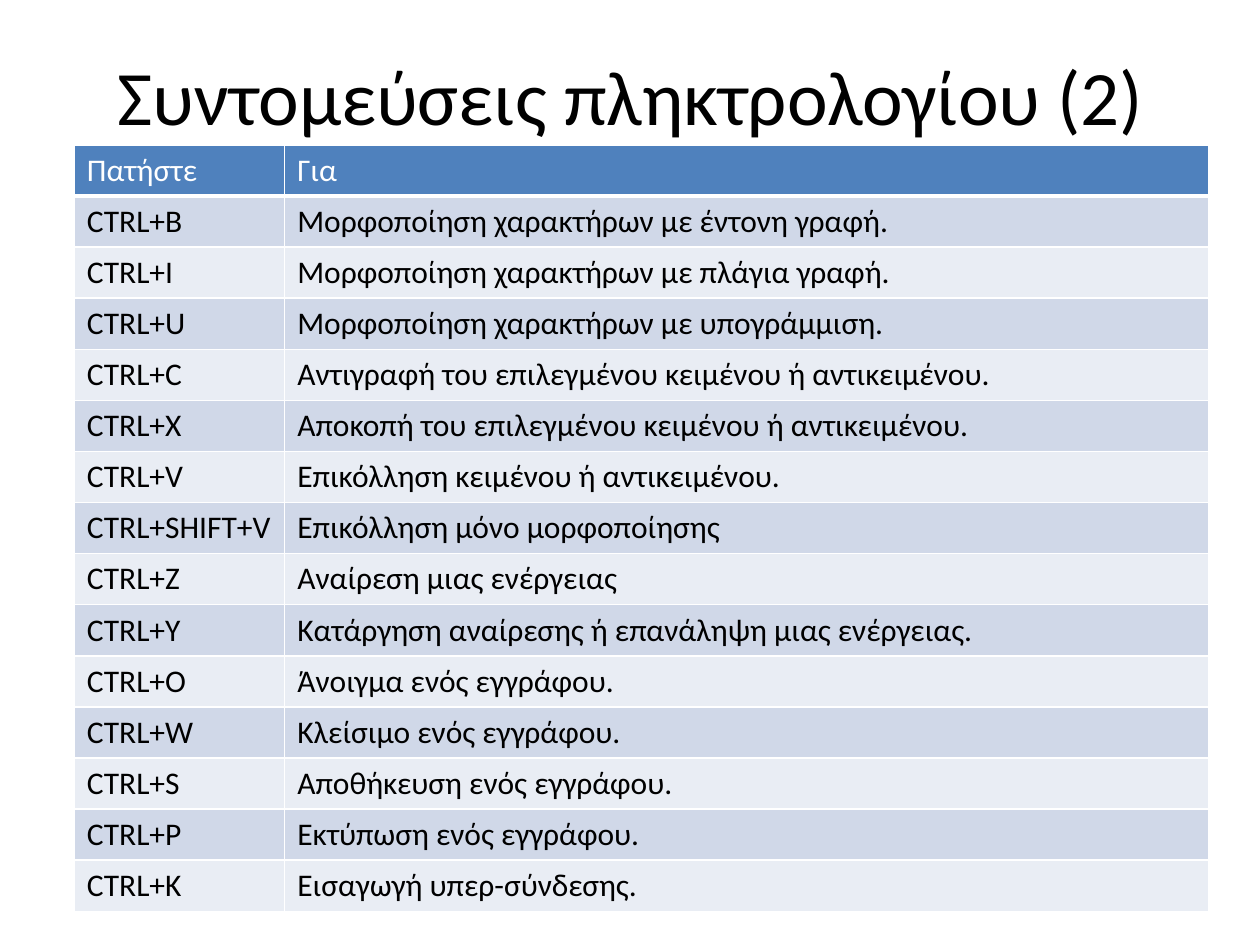
from lxml import etree
from pptx import Presentation
from pptx.dml.color import RGBColor
from pptx.enum.text import MSO_ANCHOR, PP_ALIGN
from pptx.oxml.ns import qn
from pptx.util import Pt

CENTER, LEFT = PP_ALIGN.CENTER, PP_ALIGN.LEFT
MIDDLE = MSO_ANCHOR.MIDDLE

TITLE = "Συντομεύσεις πληκτρολογίου (2)"
HEADER = ("Πατήστε", "Για")
SHORTCUTS = [
    ("CTRL+B", "Μορφοποίηση χαρακτήρων με έντονη γραφή."),
    ("CTRL+I", "Μορφοποίηση χαρακτήρων με πλάγια γραφή."),
    ("CTRL+U", "Μορφοποίηση χαρακτήρων με υπογράμμιση."),
    ("CTRL+C", "Αντιγραφή του επιλεγμένου κειμένου ή αντικειμένου."),
    ("CTRL+X", "Αποκοπή του επιλεγμένου κειμένου ή αντικειμένου."),
    ("CTRL+V", "Επικόλληση κειμένου ή αντικειμένου."),
    ("CTRL+SHIFT+V", "Επικόλληση μόνο μορφοποίησης"),
    ("CTRL+Z", "Αναίρεση μιας ενέργειας"),
    ("CTRL+Y", "Κατάργηση αναίρεσης ή επανάληψη μιας ενέργειας."),
    ("CTRL+O", "Άνοιγμα ενός εγγράφου."),
    ("CTRL+W", "Κλείσιμο ενός εγγράφου."),
    ("CTRL+S", "Αποθήκευση ενός εγγράφου."),
    ("CTRL+P", "Εκτύπωση ενός εγγράφου."),
    ("CTRL+K", "Εισαγωγή υπερ-σύνδεσης."),
]

THEME = {
    "font": "Calibri",
    "title_size": 44,
    "table_size": 18,
    "text": "000000",
    "header_text": "FFFFFF",
    "header_fill": "4F81BD",
    "bands": ("D0D8E8", "E9EDF4"),
    "border": "FFFFFF",
}

SLIDE_SIZE = (720, 540)
TITLE_BOX = (36.72, 9.36, 648, 90)
TABLE_LEFT, TABLE_TOP = 42.48, 82.8
COLUMN_WIDTHS = (120.24, 527.76)
ROW_HEIGHT = 29.18
BORDER_WIDTH, HEADER_RULE_WIDTH = 1, 3


def write(tf, text, size, color, align):
    p = tf.paragraphs[0]
    p.alignment = align
    r = p.add_run()
    r.text = text
    font_values = {"name": THEME["font"], "size": Pt(size), "bold": False}
    for name, value in font_values.items():
        setattr(r.font, name, value)
    r.font.color.rgb = RGBColor.from_string(color)


def set_borders(cell, widths):
    """Draw the cell's edges; widths maps a:lnL, a:lnR, a:lnT and a:lnB to points."""
    props = cell._tc.get_or_add_tcPr()
    for position, (tag, width) in enumerate(widths.items()):
        line = etree.Element(qn(tag), w=str(Pt(width)))
        fill = etree.SubElement(line, qn("a:solidFill"))
        etree.SubElement(fill, qn("a:srgbClr"), val=THEME["border"])
        props.insert(position, line)


def add_shortcut_table(slide):
    rows = [HEADER, *SHORTCUTS]
    table = slide.shapes.add_table(
        len(rows), len(HEADER), Pt(TABLE_LEFT), Pt(TABLE_TOP),
        Pt(sum(COLUMN_WIDTHS)), Pt(ROW_HEIGHT * len(rows))).table
    for column, width in zip(table.columns, COLUMN_WIDTHS):
        column.width = Pt(width)
    for i, values in enumerate(rows):
        table.rows[i].height = Pt(ROW_HEIGHT)
        is_header = i == 0
        fill = THEME["header_fill"] if is_header else THEME["bands"][(i - 1) % 2]
        color = THEME["header_text" if is_header else "text"]
        widths = dict.fromkeys(("a:lnL", "a:lnR", "a:lnT", "a:lnB"), BORDER_WIDTH)
        if is_header:
            widths["a:lnB"] = HEADER_RULE_WIDTH
        elif i == 1:
            widths["a:lnT"] = HEADER_RULE_WIDTH
        for cell, text in zip(table.rows[i].cells, values):
            cell.fill.solid()
            cell.fill.fore_color.rgb = RGBColor.from_string(fill)
            set_borders(cell, widths)
            write(cell.text_frame, text, THEME["table_size"], color, LEFT)


def add_title(slide):
    tf = slide.shapes.add_textbox(*map(Pt, TITLE_BOX)).text_frame
    tf.word_wrap = True
    tf.vertical_anchor = MIDDLE
    write(tf, TITLE, THEME["title_size"], THEME["text"], CENTER)


def main():
    prs = Presentation()
    prs.slide_width, prs.slide_height = map(Pt, SLIDE_SIZE)
    slide = prs.slides.add_slide(prs.slide_layouts[6])
    add_shortcut_table(slide)
    add_title(slide)
    prs.save("out.pptx")


if __name__ == "__main__":
    main()
